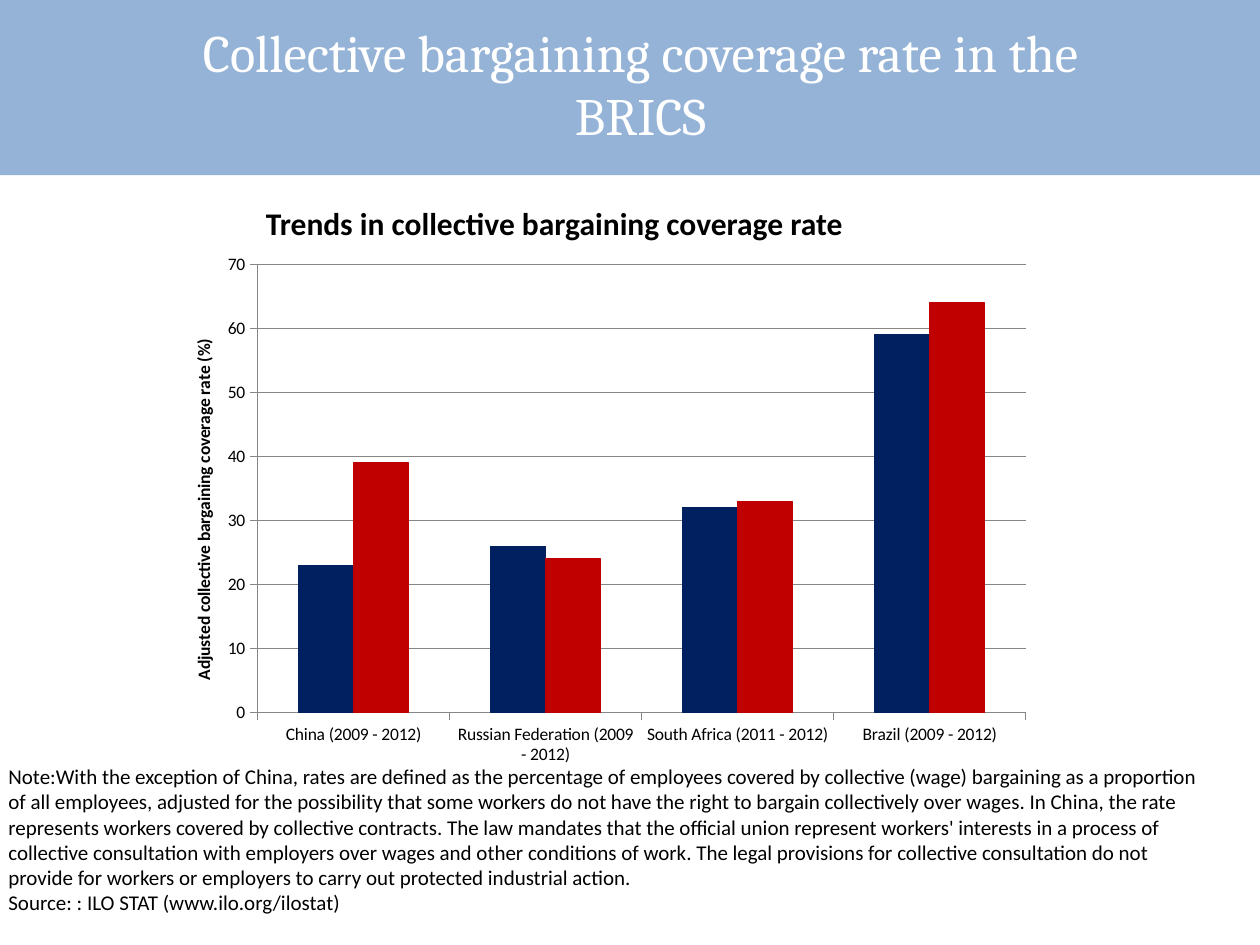
"""Build the slide on collective bargaining coverage rates in the BRICS."""
from lxml.etree import SubElement
from pptx import Presentation
from pptx.chart.data import CategoryChartData
from pptx.dml.color import RGBColor
from pptx.enum.chart import XL_CHART_TYPE as ChartType, XL_TICK_MARK as TickMark
from pptx.enum.shapes import MSO_SHAPE as Preset
from pptx.enum.text import MSO_ANCHOR as Anchor, MSO_AUTO_SIZE as AutoSize, PP_ALIGN as Align
from pptx.oxml.ns import qn
from pptx.util import Cm, Pt

COLORS = {
    "banner": "95B3D7", "title": "FFFFFF", "text": "000000",
    "axis": "868686", "first": "002060", "second": "C00000",
}
TITLE = "Collective bargaining coverage rate in the BRICS"
HEADING = "Trends in collective bargaining coverage rate"
AXIS_TITLE = "Adjusted collective bargaining coverage rate (%)"
COUNTRIES = [
    "China (2009 - 2012)", "Russian Federation (2009 - 2012)",
    "South Africa (2011 - 2012)", "Brazil (2009 - 2012)",
]
RATES = [
    ("Series 1", (23, 26, 32, 59), "first"),
    ("Series 2", (39, 24, 33, 64), "second"),
]
NOTES = [
    "Note:With the exception of China, rates are defined as the percentage of employees "
    "covered by collective (wage) bargaining as a proportion of all employees, adjusted for "
    "the possibility that some workers do not have the right to bargain collectively over "
    "wages. In China, the rate represents workers covered by collective contracts. The law "
    "mandates that the official union represent workers' interests in a process of collective "
    "consultation with employers over wages and other conditions of work. The legal provisions "
    "for collective consultation do not provide for workers or employers to carry out "
    "protected industrial action. ",
    "Source: : ILO STAT (www.ilo.org/ilostat)",
]
PLOT = {"x": 0.078, "y": 0.02, "w": 0.875, "h": 0.869}


def rgb(role):
    """Return the colour of a role."""
    return RGBColor.from_string(COLORS[role])


def box(left, top, width, height):
    """Return a position and size in centimetres."""
    return Cm(left), Cm(top), Cm(width), Cm(height)


def style(font, size, role="text", bold=False, name="Calibri"):
    """Format a font."""
    font.name, font.size, font.bold = name, Pt(size), bold
    font.color.rgb = rgb(role)


def add_banner(slide):
    """Put the coloured band behind the title."""
    banner = slide.shapes.add_shape(Preset.RECTANGLE, *box(0, 0, 25.4, 3.53))
    banner.shadow.inherit = False
    banner.fill.solid()
    banner.fill.fore_color.rgb = rgb("banner")
    banner.line.fill.background()
    slide.shapes.element.insert(2, banner.element)


def add_title(slide):
    """Fill and place the title."""
    title = slide.shapes.title
    title.left, title.top, title.width, title.height = box(3.81, 0.23, 18.21, 4.11)
    frame = title.text_frame
    frame.auto_size, frame.word_wrap = AutoSize.NONE, True
    frame.vertical_anchor = Anchor.MIDDLE
    frame.margin_bottom = Cm(1.36)
    paragraph = frame.paragraphs[0]
    paragraph.alignment = Align.CENTER
    run = paragraph.add_run()
    run.text = TITLE
    style(run.font, 30, "title", name="Cambria")


def add_text(slide, place, lines, size, bold=False):
    """Add a text box with one run per line."""
    frame = slide.shapes.add_textbox(*place).text_frame
    frame.word_wrap = True
    paragraph = frame.paragraphs[0]
    for index, line in enumerate(lines):
        if index:
            paragraph.add_line_break()
        run = paragraph.add_run()
        run.text = line
        style(run.font, size, bold=bold)


def fix_plot(chart):
    """Set the inner plot area as fractions of the chart."""
    plot_area = chart.element.find(".//" + qn("c:plotArea"))
    layout = plot_area.find(qn("c:layout"))
    if layout is None:
        layout = SubElement(plot_area, qn("c:layout"))
        plot_area.insert(0, layout)
    manual = SubElement(layout, qn("c:manualLayout"))
    settings = {"layoutTarget": "inner", "xMode": "edge", "yMode": "edge", **PLOT}
    for key, value in settings.items():
        SubElement(manual, qn("c:" + key)).set("val", str(value))


def add_chart(slide):
    """Add the clustered columns."""
    data = CategoryChartData()
    data.categories = COUNTRIES
    for name, values, _ in RATES:
        data.add_series(name, values)
    place = box(3.81, 5.13, 17.7, 10.39)
    chart = slide.shapes.add_chart(ChartType.COLUMN_CLUSTERED, *place, data).chart
    chart.has_legend = chart.has_title = False
    style(chart.font, 10)
    columns = chart.plots[0]
    columns.gap_width, columns.overlap, columns.vary_by_categories = 150, 0, False
    for series, (_, _, role) in zip(columns.series, RATES):
        series.format.fill.solid()
        series.format.fill.fore_color.rgb = rgb(role)
        series.format.line.color.rgb = rgb(role)
        series.format.line.width = Pt(0.75)
    rate_axis = chart.value_axis
    for axis in (chart.category_axis, rate_axis):
        axis.major_tick_mark, axis.minor_tick_mark = TickMark.OUTSIDE, TickMark.NONE
        axis.format.line.color.rgb = rgb("axis")
        style(axis.tick_labels.font, 10)
    rate_axis.minimum_scale, rate_axis.maximum_scale, rate_axis.major_unit = 0, 70, 10
    rate_axis.major_gridlines.format.line.color.rgb = rgb("axis")
    run = rate_axis.axis_title.text_frame.paragraphs[0].add_run()
    run.text = AXIS_TITLE
    style(run.font, 10, bold=True)
    fix_plot(chart)


def main():
    """Assemble and save the slide."""
    deck = Presentation()
    deck.slide_width, deck.slide_height = Cm(25.4), Cm(19.05)
    slide = deck.slides.add_slide(deck.slide_layouts[5])
    add_banner(slide)
    add_title(slide)
    add_text(slide, box(-0.08, 15.27, 24.77, 3.33), NOTES, 12)
    add_chart(slide)
    add_text(slide, box(5.11, 3.99, 14.4, 1.02), [HEADING], 18, bold=True)
    deck.save("out.pptx")


if __name__ == "__main__":
    main()
